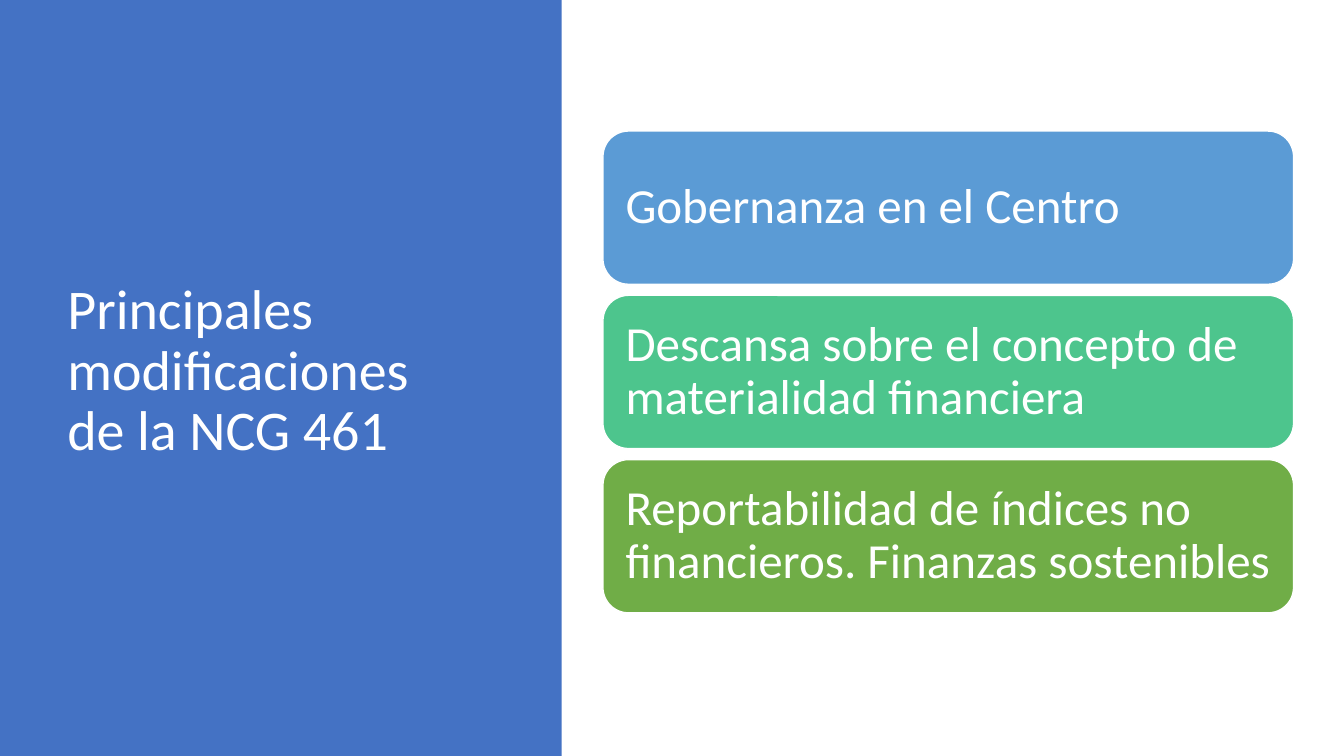
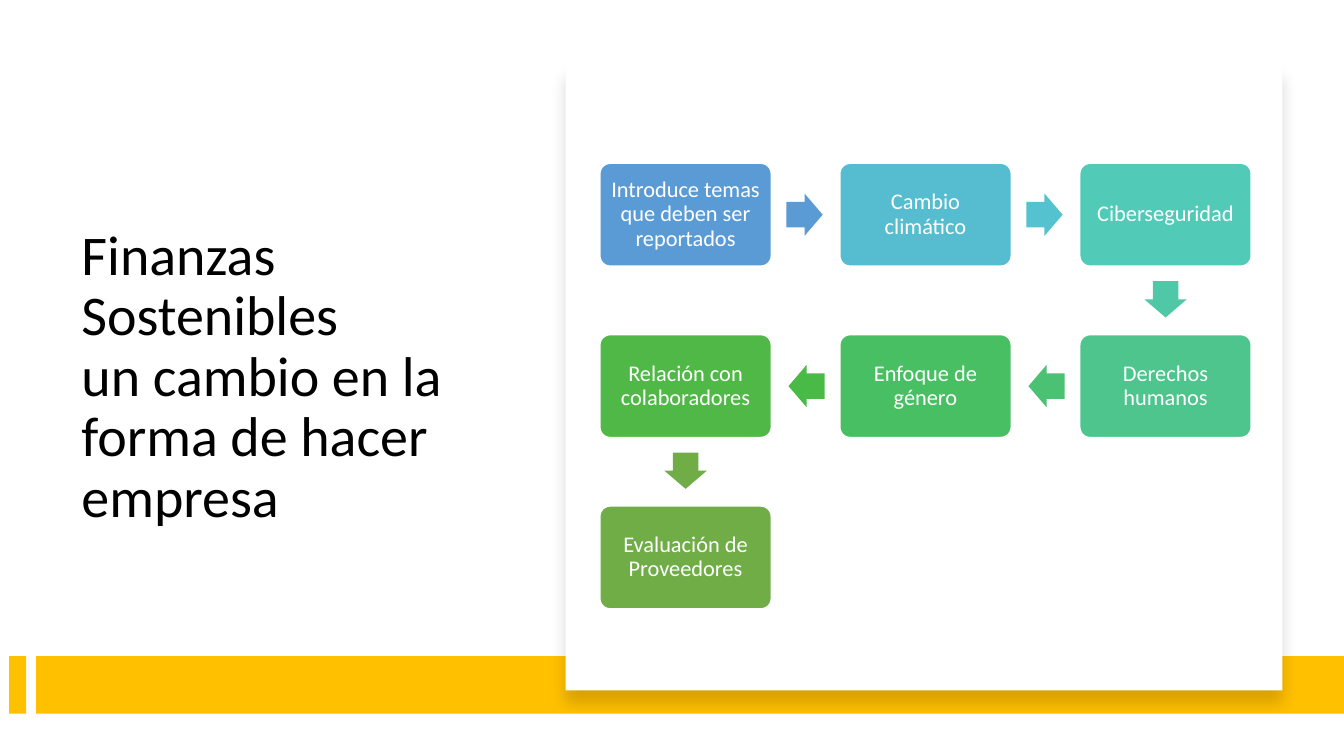
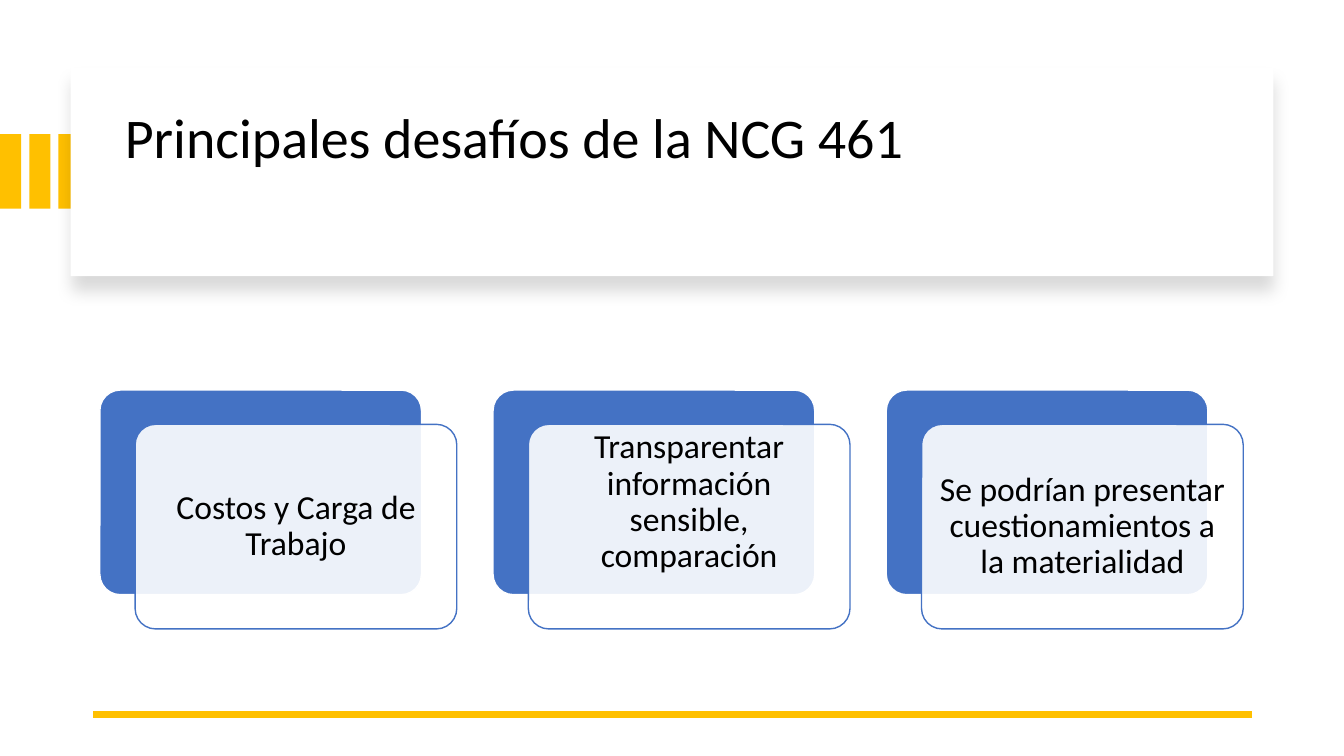
import pptx
import pptx.dml.color
import pptx.enum.shapes
import pptx.enum.text
import pptx.oxml
import pptx.oxml.ns
import pptx.util

Inches = pptx.util.Inches
Pt = pptx.util.Pt
RGBColor = pptx.dml.color.RGBColor
Shape = pptx.enum.shapes.MSO_SHAPE
Align = pptx.enum.text.PP_ALIGN
Anchor = pptx.enum.text.MSO_ANCHOR

FONT = "Calibri"
WHITE = RGBColor(0xFF, 0xFF, 0xFF)
BLACK = RGBColor(0, 0, 0)
BLUE = RGBColor(0x44, 0x72, 0xC4)
SKY = RGBColor(0x5B, 0x9B, 0xD5)
CYAN = RGBColor(0x56, 0xBC, 0xD0)
CYAN_ARROW = RGBColor(0x55, 0xC3, 0xCF)
TURQUOISE = RGBColor(0x52, 0xCA, 0xB8)
TURQUOISE_ARROW = RGBColor(0x50, 0xC8, 0xA7)
MINT = RGBColor(0x4D, 0xC5, 0x8D)
MINT_ARROW = RGBColor(0x4B, 0xC1, 0x74)
EMERALD = RGBColor(0x49, 0xBF, 0x64)
EMERALD_ARROW = RGBColor(0x4A, 0xBA, 0x46)
LEAF = RGBColor(0x50, 0xB8, 0x46)
GREEN = RGBColor(0x70, 0xAD, 0x47)
GOLD = RGBColor(0xFF, 0xC0, 0x00)

DRAWING = pptx.oxml.ns.nsdecls("a")
PANEL_SHADOW = (
    f'<a:effectLst {DRAWING}><a:outerShdw blurRad="{Pt(11)}" dist="{Pt(10)}" '
    'dir="5400000" algn="t" rotWithShape="0"><a:srgbClr val="000000">'
    '<a:alpha val="15000"/></a:srgbClr></a:outerShdw></a:effectLst>'
)


def write(box, text, size, color, align, insets):
    frame = box.text_frame
    frame.word_wrap = True
    frame.vertical_anchor = Anchor.MIDDLE
    frame.margin_left, frame.margin_top, frame.margin_right, frame.margin_bottom = map(Inches, insets)
    frame.text = text
    for para in frame.paragraphs:
        para.alignment = align
        para.line_spacing = 0.9
        for span in para.runs:
            span.font.name = FONT
            span.font.size = Pt(size)
            span.font.color.rgb = color


def add_title(page, text, left, top, width, height, color=BLACK):
    box = page.shapes.add_textbox(*map(Inches, (left, top, width, height)))
    write(box, text, 40, color, Align.LEFT, (0.1, 0.05, 0.1, 0.05))


def add_block(page, kind, left, top, width, height, fill, line=None):
    box = page.shapes.add_shape(kind, *map(Inches, (left, top, width, height)))
    box.shadow.inherit = False
    box.fill.solid()
    box.fill.fore_color.rgb = fill
    if line is None:
        box.line.fill.background()
    else:
        box.line.color.rgb = line
        box.line.width = Pt(1)
    return box


def add_card(page, left, top, width, height, fill, line=WHITE, corner=0.1):
    card = add_block(page, Shape.ROUNDED_RECTANGLE, left, top, width, height, fill, line)
    card.adjustments[0] = corner
    return card


def add_panel(page, left, top, width, height):
    panel = add_block(page, Shape.RECTANGLE, left, top, width, height, WHITE)
    properties = panel.element.spPr
    properties.remove(properties.find(pptx.oxml.ns.qn("a:effectLst")))
    properties.append(pptx.oxml.parse_xml(PANEL_SHADOW))


def add_arrow(page, center_x, center_y, rotation, fill):
    width, height = 0.36, 0.42
    arrow = add_block(page, Shape.RIGHT_ARROW, center_x - width / 2, center_y - height / 2, width, height, fill)
    arrow.adjustments[0] = 0.6
    arrow.adjustments[1] = 0.5
    arrow.rotation = rotation


def add_rule(page, start_x, end_x, y):
    rule = page.shapes.add_connector(
        pptx.enum.shapes.MSO_CONNECTOR.STRAIGHT, Inches(start_x), Inches(y), Inches(end_x), Inches(y))
    rule.line.color.rgb = GOLD
    rule.line.width = Pt(4.5)
    rule.element.spPr.append(pptx.oxml.parse_xml(f"<a:effectLst {DRAWING}/>"))


def set_opacity(shape, percent):
    color = shape.element.spPr.find(".//" + pptx.oxml.ns.qn("a:srgbClr"))
    color.append(pptx.oxml.parse_xml(f'<a:alpha {DRAWING} val="{percent * 1000}"/>'))


def build_changes(page):
    add_block(page, Shape.RECTANGLE, 0, 0, 5.57, 7.5, BLUE)
    add_title(page, "Principales modificaciones de la NCG 461", 0.57, 0.68, 4.16, 6.02, WHITE)
    changes = [
        ("Gobernanza en el Centro", SKY),
        ("Descansa sobre el concepto de materialidad financiera", MINT),
        ("Reportabilidad de índices no financieros. Finanzas sostenibles", GREEN),
    ]
    for row, (text, fill) in enumerate(changes):
        card = add_card(page, 5.98, 1.3 + 1.63 * row, 6.85, 1.52, fill, corner=0.1667)
        write(card, text, 35, WHITE, Align.LEFT, [0.15] * 4)


def build_topics(page):
    add_title(page, "Finanzas Sostenibles\vun cambio en la forma de hacer empresa", 0.71, 1.2, 4.15, 5.1)
    for left, width in ((0.09, 0.17), (0.36, 12.97)):
        add_block(page, Shape.RECTANGLE, left, 6.51, width, 0.57, GOLD)
    add_panel(page, 5.61, 0.64, 7.11, 6.21)
    topics = [
        ("Introduce temas que deben ser reportados", 0, 0, SKY, SKY),
        ("Cambio climático", 1, 0, CYAN, CYAN_ARROW),
        ("Ciberseguridad", 2, 0, TURQUOISE, TURQUOISE_ARROW),
        ("Derechos humanos", 2, 1, MINT, MINT_ARROW),
        ("Enfoque de género", 1, 1, EMERALD, EMERALD_ARROW),
        ("Relación con colaboradores", 0, 1, LEAF, GREEN),
        ("Evaluación de Proveedores", 0, 2, GREEN, None),
    ]
    rotations = {(1, 0): 0, (0, 1): 90, (-1, 0): 180}
    width, height = 1.7, 1.02
    for index, (text, column, row, fill, arrow_fill) in enumerate(topics):
        left, top = 5.95 + 2.38 * column, 1.62 + 1.7 * row
        card = add_card(page, left, top, width, height, fill)
        write(card, text, 16, WHITE, Align.CENTER, [0.07] * 4)
        if arrow_fill is not None:
            next_column, next_row = topics[index + 1][1:3]
            across, down = next_column - column, next_row - row
            add_arrow(page, left + width / 2 + 1.18 * across, top + height / 2 + 0.84 * down,
                      rotations[across, down], arrow_fill)


def build_challenges(page):
    for column in range(3):
        add_block(page, Shape.RECTANGLE, 0.29 * column, 1.33, 0.21, 0.74, GOLD)
    add_panel(page, 0.7, 0.67, 11.93, 2.07)
    add_title(page, "Principales desafíos de la NCG 461", 1.14, 0.89, 11.13, 1)
    add_rule(page, 12.42, 0.92, 7.09)
    even = [0.1] * 4
    raised = (0.1, 0, 0.1, 0.48)
    challenges = [
        ("Costos y Carga de Trabajo", even),
        ("Transparentar información sensible, comparación", raised),
        ("Se podrían presentar cuestionamientos a la materialidad", even),
    ]
    for column, (text, insets) in enumerate(challenges):
        left = 0.99 + 3.9 * column
        add_card(page, left, 3.87, 3.19, 2.03, BLUE)
        card = add_card(page, left + 0.35, 4.21, 3.19, 2.03, WHITE, BLUE)
        set_opacity(card, 90)
        write(card, text, 24, BLACK, Align.CENTER, insets)


def main():
    deck = pptx.Presentation()
    deck.slide_width = Inches(13.33)
    deck.slide_height = Inches(7.5)
    for build in (build_changes, build_topics, build_challenges):
        build(deck.slides.add_slide(deck.slide_layouts[6]))
    deck.save("out.pptx")


if __name__ == "__main__":
    main()
